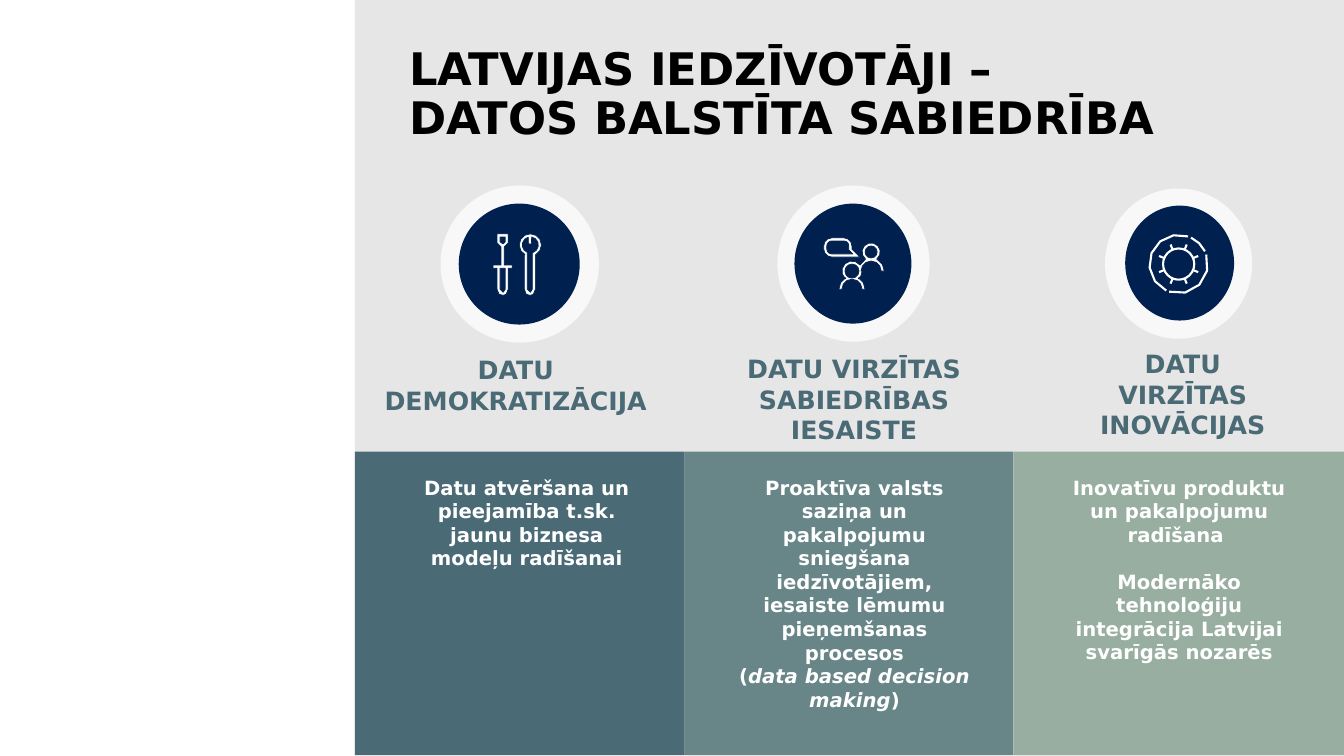
"""Build the slide on a data-driven society: three columns with icons, headings and text."""
from math import cos, radians, sin

from lxml.etree import SubElement
from pptx import Presentation
from pptx.dml.color import RGBColor
from pptx.enum.shapes import MSO_CONNECTOR, MSO_SHAPE
from pptx.enum.text import MSO_AUTO_SIZE, PP_ALIGN
from pptx.oxml.ns import qn
from pptx.util import Inches, Pt

FONT = "DejaVu Sans"
WHITE, NAVY, SLATE = "FFFFFF", "002050", "4A6A75"
TITLE = "LATVIJAS IEDZĪVOTĀJI –\vDATOS BALSTĪTA SABIEDRĪBA"
PANEL_LEFT, CARD_TOP, CARD_HEIGHT, BODY_TOP = 3.52, 4.48, 3.01, 4.67

# Asterisks in the body paragraphs enclose italics.
COLUMNS = [
    {
        "card": (3.52, 3.27, SLATE),
        "ring": (4.37, 1.84, 1.57, 1.56),
        "disc": (4.55, 2.02, 1.2, 1.2),
        "heading": ["DATU DEMOKRATIZĀCIJA"],
        "heading_box": (3.6, 3.47, 3.03, 1.01),
        "body": ["Datu atvēršana un pieejamība t.sk. jaunu biznesa modeļu radīšanai"],
        "body_box": (4.01, 2.43, 1.28),
    },
    {
        "card": (6.79, 3.26, "688688"),
        "ring": (7.71, 1.84, 1.51, 1.55),
        "disc": (7.88, 2.02, 1.16, 1.19),
        "heading": ["DATU VIRZĪTAS SABIEDRĪBAS IESAISTE"],
        "heading_box": (7.13, 3.46, 2.68, 1.01),
        "body": ["Proaktīva valsts saziņa un pakalpojumu sniegšana iedzīvotājiem, "
                 "iesaiste lēmumu pieņemšanas procesos",
                 "(*data based decision making*)"],
        "body_box": (7.2, 2.55, 2.46),
    },
    {
        "card": (10.05, 3.29, "98AEA1"),
        "ring": (10.96, 1.87, 1.46, 1.49),
        "disc": (11.16, 2.04, 1.08, 1.14),
        "heading": ["DATU", "VIRZĪTAS INOVĀCIJAS"],
        "heading_box": (10.39, 3.41, 2.68, 1.01),
        "body": ["Inovatīvu produktu un pakalpojumu radīšana ",
                 "Modernāko tehnoloģiju integrācija Latvijai svarīgās nozarēs"],
        "body_box": (10.42, 2.55, 1.99),
        "body_gap": 16.5,
    },
]

# Contours hold points (x, y) and arcs (centre x, centre y, radius, start, end).
SCREWDRIVER = [
    [(5.04, 2.66), (5.08, 2.66), (5.08, 2.63), (5, 2.63), (5, 2.45), (5.04, 2.41),
     (5.04, 2.32), (4.93, 2.32), (4.93, 2.41), (4.97, 2.45), (4.97, 2.63), (4.89, 2.63),
     (4.89, 2.66), (4.93, 2.66), (4.93, 2.87), (4.95, 2.92), (4.99, 2.93), (5.02, 2.92),
     (5.04, 2.87)],
    [(4.96, 2.4), (4.96, 2.35), (5.01, 2.35), (5.01, 2.4), (4.99, 2.42)],
    [(4.96, 2.66), (5.01, 2.66), (5.01, 2.87), (4.99, 2.9), (4.96, 2.87)],
]
WRENCH = [
    [(5.26, 2.43, 0.11, 61, -241), (5.2, 2.53), (5.2, 2.87), (5.22, 2.92), (5.26, 2.93),
     (5.29, 2.92), (5.31, 2.87), (5.31, 2.53)],
    [(5.28, 2.51), (5.28, 2.87), (5.26, 2.9), (5.23, 2.87), (5.23, 2.51),
     (5.26, 2.43, 0.08, 110, 256), (5.24, 2.41), (5.26, 2.43), (5.27, 2.41),
     (5.26, 2.43, 0.08, 280, 430)],
]
PEOPLE = [
    [(8.64, 2.5, 0.09, 52, -232), (8.45, 2.69, 0.1, -37, -230),
     (8.45, 2.87, 0.13, 242, 180), (8.45, 2.87, 0.1, 180, 360),
     (8.45, 2.87, 0.13, 360, 298), (8.45, 2.69, 0.1, 50, 0),
     (8.64, 2.69, 0.1, 180, 360), (8.64, 2.69, 0.13, 360, 298)],
    [(8.45, 2.69, 0.07, 0, 360)],
    [(8.64, 2.5, 0.06, 0, 360)],
]
SPEECH_BUBBLE = [
    [(8.53, 2.55), (8.25, 2.47, 0.08, 90, 180), (8.25, 2.44, 0.08, 180, 270),
     (8.37, 2.44, 0.08, 270, 360), (8.45, 2.47)],
    [(8.25, 2.47, 0.05, 90, 180), (8.25, 2.44, 0.05, 180, 270),
     (8.37, 2.44, 0.05, 270, 360), (8.42, 2.48), (8.46, 2.52)],
]
GEAR_CENTRE, GEAR_SIZE, ORBIT_RADIUS = (11.69, 2.62), 0.31, 0.29
TOOTH_RADII, TOOTH_COUNT = (0.16, 0.21), 8
ORBIT_ARCS = [(-71, -245), (-26, -65), (109, -19)]
ARC_STEP = 30


def color(hex_text):
    return RGBColor.from_string(hex_text)


def on_circle(centre, radius, angle):
    return (centre[0] + radius * cos(radians(angle)), centre[1] + radius * sin(radians(angle)))


def paint(shape, fill=None, line=None, width=0.5):
    shape.shadow.inherit = False
    if fill:
        shape.fill.solid()
        shape.fill.fore_color.rgb = color(fill)
    else:
        shape.fill.background()
    if line:
        shape.line.color.rgb = color(line)
        shape.line.width = Pt(width)
    else:
        shape.line.fill.background()


def add_block(preset, box, fill=None, **outline):
    paint(slide.shapes.add_shape(preset, *map(Inches, box)), fill, **outline)


def trace(contour):
    points = []
    for part in contour:
        if len(part) == 2:
            points.append(part)
        else:
            x, y, radius, start, end = part
            steps = max(2, round(abs(end - start) / ARC_STEP))
            points += [on_circle((x, y), radius, start + (end - start) * step / steps)
                       for step in range(steps + 1)]
    return [(Inches(x), Inches(y)) for x, y in points]


def add_outline(contours, close=True, **look):
    first, *others = map(trace, contours)
    builder = slide.shapes.build_freeform(*first[0])
    builder.add_line_segments(first[1:], close=close)
    for points in others:
        builder.move_to(*points[0])
        builder.add_line_segments(points[1:], close=close)
    paint(builder.convert_to_shape(), **look)


def add_text(box, paragraphs, size, ink, align=PP_ALIGN.CENTER, gap=0, spacing=None, grow=True):
    frame = slide.shapes.add_textbox(*map(Inches, box)).text_frame
    frame.word_wrap = True
    frame.auto_size = MSO_AUTO_SIZE.SHAPE_TO_FIT_TEXT if grow else MSO_AUTO_SIZE.NONE
    frame.text = "\n".join(text.replace("*", "") for text in paragraphs)
    for number, (paragraph, text) in enumerate(zip(frame.paragraphs, paragraphs)):
        paragraph.alignment = align
        if spacing:
            paragraph.line_spacing = spacing
        if number and gap:
            paragraph.space_before = Pt(gap)
        pieces = text.split("*")
        if len(pieces) > 1:
            paragraph.text = pieces[0]
            for position, piece in enumerate(pieces[1:], 1):
                run = paragraph.add_run()
                run.text = piece
                run.font.italic = position % 2 == 1
        for run in paragraph.runs:
            run.font.name, run.font.size, run.font.bold = FONT, Pt(size), True
            run.font.color.rgb = color(ink)


def add_gear():
    for start, end in ORBIT_ARCS:
        add_outline([[(*GEAR_CENTRE, ORBIT_RADIUS, start, end)]], close=False, line=WHITE, width=1.5)
    for tooth in range(TOOTH_COUNT):
        angle = (tooth + 0.5) * 360 / TOOTH_COUNT
        ends = [Inches(value) for radius in TOOTH_RADII
                for value in on_circle(GEAR_CENTRE, radius, angle)]
        line = slide.shapes.add_connector(MSO_CONNECTOR.STRAIGHT, *ends)
        line.line.color.rgb = color(WHITE)
        line.line.width = Pt(1.5)
        SubElement(line._element.spPr, qn("a:effectLst"))
    corner = [value - GEAR_SIZE / 2 for value in GEAR_CENTRE]
    add_block(MSO_SHAPE.OVAL, (*corner, GEAR_SIZE, GEAR_SIZE), line=WHITE, width=1.5)


presentation = Presentation()
presentation.slide_width, presentation.slide_height = Inches(13.33), Inches(7.5)
slide = presentation.slides.add_slide(presentation.slide_layouts[6])

add_block(MSO_SHAPE.RECTANGLE, (PANEL_LEFT, 0, 9.82, 7.5), "E7E6E6")
add_text((3.96, 0.42, 9.11, 3.33), [TITLE], 32, "000000", PP_ALIGN.LEFT, spacing=0.9, grow=False)
for column in COLUMNS:
    card_left, card_width, card_fill = column["card"]
    body_left, body_width, body_height = column["body_box"]
    add_block(MSO_SHAPE.RECTANGLE, (card_left, CARD_TOP, card_width, CARD_HEIGHT), card_fill)
    add_block(MSO_SHAPE.OVAL, column["ring"], "F8F8F8")
    add_block(MSO_SHAPE.OVAL, column["disc"], NAVY)
    add_text(column["heading_box"], column["heading"], 18, SLATE)
    add_text((body_left, BODY_TOP, body_width, body_height), column["body"], 14, WHITE,
             gap=column.get("body_gap", 0))
for icon in (SCREWDRIVER, WRENCH, PEOPLE, SPEECH_BUBBLE):
    add_outline(icon, fill=WHITE, line=NAVY)
add_gear()

presentation.save("out.pptx")
